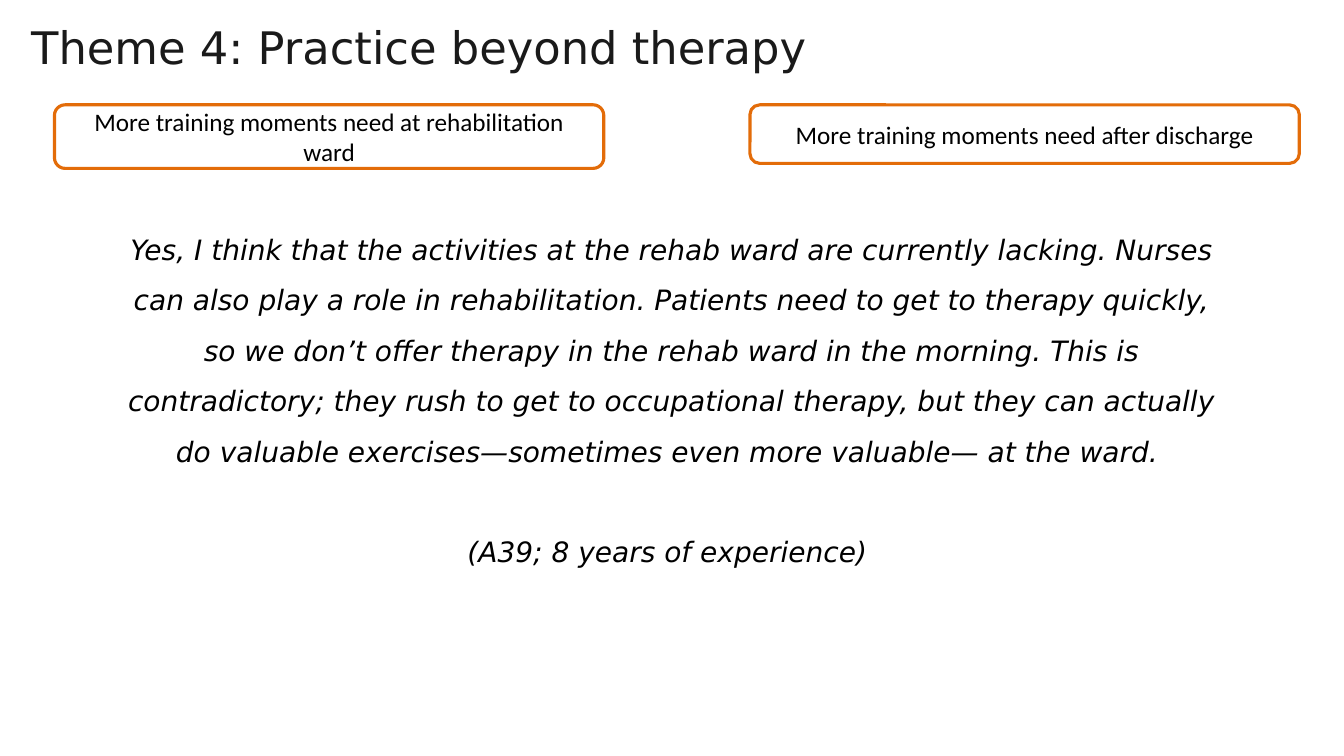
from dataclasses import dataclass

from pptx import Presentation
from pptx.dml.color import RGBColor as Rgb
from pptx.enum.shapes import MSO_SHAPE as Form
from pptx.enum.text import MSO_ANCHOR as Anchor, MSO_AUTO_SIZE as Fit, PP_ALIGN as Align
from pptx.util import Pt


@dataclass
class Theme:
    dark: Rgb = Rgb(0x1A, 0x1A, 0x1A)
    ink: Rgb = Rgb(0, 0, 0)
    edge: Rgb = Rgb(0xE3, 0x6C, 0x09)
    sans: str = "DejaVu Sans"
    body: str = "Calibri"
    head: int = 32
    quote: int = 20
    label: int = 18


class Deck:
    def __init__(self, slide, theme):
        self.slide = slide
        self.theme = theme

    def style(self, para, face, size, color, slant=False):
        for run in para.runs:
            font = run.font
            font.name = face
            font.size = Pt(size)
            font.color.rgb = color
            font.italic = slant

    def frame(self, left, top, width, height):
        box = self.slide.shapes.add_textbox(Pt(left), Pt(top), Pt(width), Pt(height))
        frame = box.text_frame
        frame.word_wrap = True
        frame.auto_size = Fit.SHAPE_TO_FIT_TEXT
        return frame

    def title(self, text, left, top, width, height):
        frame = self.frame(left, top, width, height)
        frame.margin_left = frame.margin_right = Pt(5)
        frame.margin_top = frame.margin_bottom = Pt(5)
        frame.text = text
        look = self.theme
        self.style(frame.paragraphs[0], look.sans, look.head, look.dark)

    def label(self, text, left, top, width, height):
        look = self.theme
        shape = self.slide.shapes.add_shape(
            Form.ROUNDED_RECTANGLE, Pt(left), Pt(top), Pt(width), Pt(height))
        shape.shadow.inherit = False
        shape.fill.background()
        shape.line.color.rgb = look.edge
        shape.line.width = Pt(2.25)
        frame = shape.text_frame
        frame.word_wrap = True
        frame.vertical_anchor = Anchor.MIDDLE
        frame.text = text
        para = frame.paragraphs[0]
        para.alignment = Align.CENTER
        self.style(para, look.body, look.label, look.ink)

    def quote(self, text, source, left, top, width, height):
        look = self.theme
        frame = self.frame(left, top, width, height)
        frame.text = text
        frame.add_paragraph().text = source
        for para in frame.paragraphs:
            para.alignment = Align.CENTER
            para.line_spacing = 1.5
            self.style(para, look.sans, look.quote, look.ink, True)
        frame.paragraphs[1].space_before = Pt(36)


def main():
    show = Presentation()
    show.slide_width = Pt(960)
    show.slide_height = Pt(540)
    deck = Deck(show.slides.add_slide(show.slide_layouts[6]), Theme())
    deck.title("Theme 4: Practice beyond therapy", 17.3, 9.4, 862.6, 48.2)
    labels = [
        ("More training moments need at rehabilitation ward", 38.9, 45.4),
        ("More training moments need after discharge", 535.7, 41.8),
    ]
    for text, left, height in labels:
        deck.label(text, left, 74.9, 392.4, height)
    deck.quote(
        "Yes, I think that the activities at the rehab ward are currently lacking. "
        "Nurses can also play a role in rehabilitation. Patients need to get to "
        "therapy quickly, so we don’t offer therapy in the rehab ward in the morning. "
        "This is contradictory; they rush to get to occupational therapy, but they can "
        "actually do valuable exercises—sometimes even more valuable— at the ward. ",
        "(A39; 8 years of experience) ", 78.5, 150.5, 802.8, 293)
    show.save("out.pptx")


if __name__ == "__main__":
    main()
